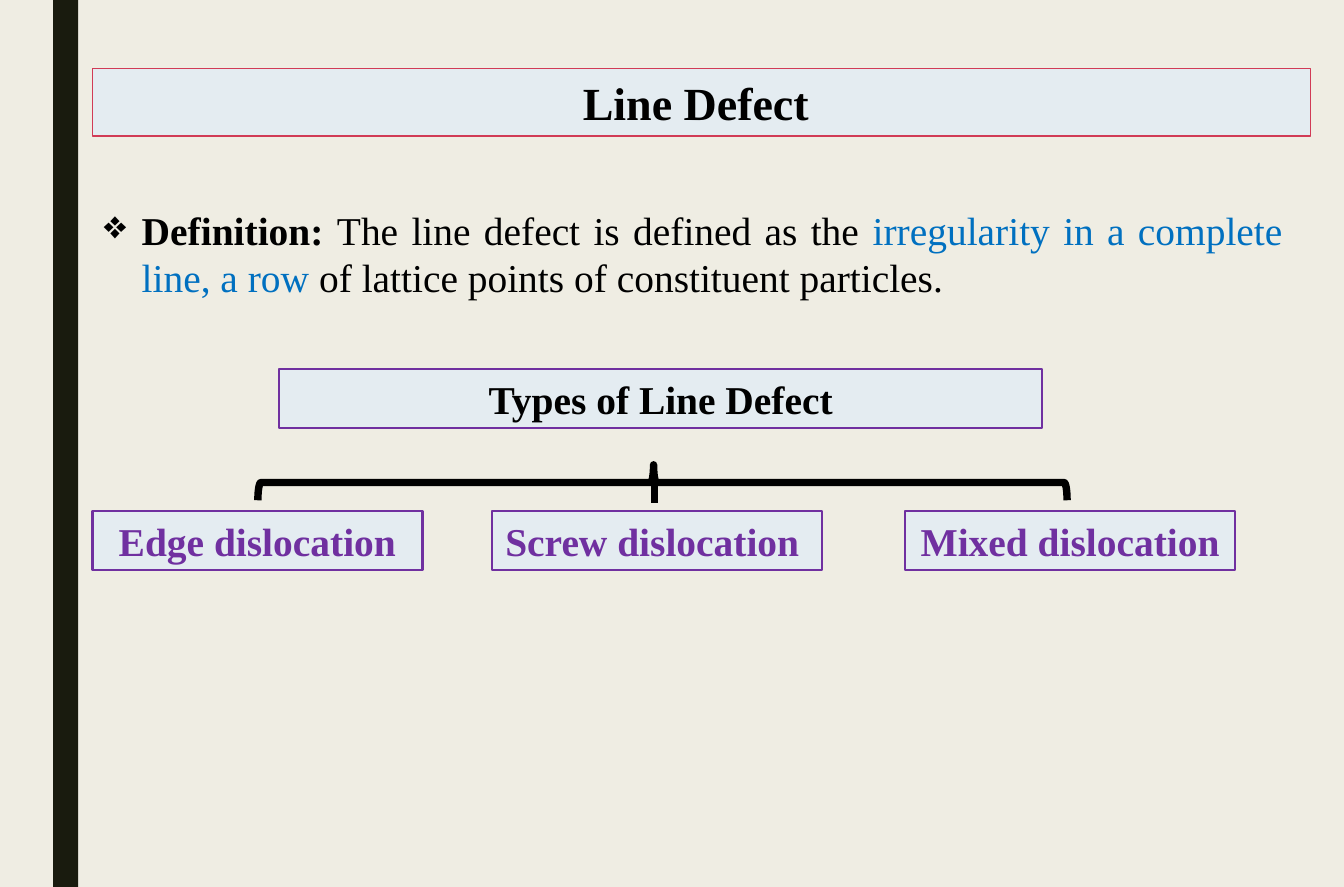
from lxml.etree import SubElement
from pptx import Presentation
from pptx.dml.color import RGBColor
from pptx.enum.shapes import MSO_CONNECTOR, MSO_SHAPE
from pptx.enum.text import MSO_ANCHOR, PP_ALIGN
from pptx.oxml.ns import qn
from pptx.util import Inches, Pt

FONT = "Times New Roman"
CREAM = RGBColor(0xEF, 0xED, 0xE3)
DARK = RGBColor(0x19, 0x1B, 0x0E)
PALE_BLUE = RGBColor(0xE4, 0xEC, 0xF1)
RED = RGBColor(0xD1, 0x3B, 0x56)
PURPLE = RGBColor(0x70, 0x30, 0xA0)
BLUE = RGBColor(0x00, 0x70, 0xC0)
BLACK = RGBColor(0, 0, 0)

BOX_HEIGHT = 0.5
KIND_WIDTH = 2.79
KINDS = [("Edge dislocation", 0), ("Screw dislocation ", 3.38),
         ("Mixed dislocation", 6.87)]


def style_run(run, size, color, bold):
    run.font.name = FONT
    run.font.size = Pt(size)
    run.font.color.rgb = color
    run.font.bold = bold


def add_side_bar(slide, left, top, width, height):
    bar = slide.shapes.add_shape(MSO_SHAPE.RECTANGLE, Inches(left), Inches(top),
                                 Inches(width), Inches(height))
    bar.shadow.inherit = False
    bar.fill.solid()
    bar.fill.fore_color.rgb = DARK
    bar.line.fill.background()


def add_label(slide, left, top, width, height, text, size=24, color=BLACK,
              border=PURPLE, border_width=1.5):
    label = slide.shapes.add_shape(MSO_SHAPE.RECTANGLE, Inches(left), Inches(top),
                                   Inches(width), Inches(height))
    label.shadow.inherit = False
    label.fill.solid()
    label.fill.fore_color.rgb = PALE_BLUE
    label.line.color.rgb = border
    label.line.width = Pt(border_width)
    frame = label.text_frame
    frame.word_wrap = True
    frame.vertical_anchor = MSO_ANCHOR.TOP
    frame.text = text
    paragraph = frame.paragraphs[0]
    paragraph.alignment = PP_ALIGN.CENTER
    style_run(paragraph.runs[0], size, color, True)


def add_definition(slide, left, top, width, height):
    definition = slide.shapes.add_textbox(Inches(left), Inches(top),
                                          Inches(width), Inches(height))
    frame = definition.text_frame
    frame.word_wrap = True
    paragraph = frame.paragraphs[0]
    paragraph.alignment = PP_ALIGN.JUSTIFY
    for text, color, bold in [
        ("Definition: ", BLACK, True),
        ("The line defect is defined as the ", BLACK, False),
        ("irregularity in a complete line, a row", BLUE, False),
        (" of lattice points of constituent particles. ", BLACK, False),
    ]:
        run = paragraph.add_run()
        run.text = text
        style_run(run, 24, color, bold)
    properties = paragraph._p.get_or_add_pPr()
    properties.set("marL", str(Inches(0.32)))
    properties.set("indent", str(Inches(-0.32)))
    SubElement(properties, qn("a:buChar"), char="❖")


def add_brace(slide, left, top, width, height):
    """Draw a brace that points up over the given box, with a middle stem."""
    brace_left = left + (width - height) / 2
    brace_top = top + (height - width) / 2
    brace = slide.shapes.add_shape(MSO_SHAPE.RIGHT_BRACE, Inches(brace_left),
                                   Inches(brace_top), Inches(height), Inches(width))
    brace.rotation = 270
    brace.adjustments[0] = 0.083
    brace.adjustments[1] = 0.489
    brace.shadow.inherit = False
    brace.fill.background()

    stem_x = Inches(left + 0.49 * width)
    stem = slide.shapes.add_connector(MSO_CONNECTOR.STRAIGHT, stem_x, Inches(top + 0.16),
                                      stem_x, Inches(top + 0.32))
    SubElement(stem._element.spPr, qn("a:effectLst"))
    for part in (brace, stem):
        part.line.color.rgb = BLACK
        part.line.width = Pt(4.5)


def add_types_tree(slide, left, top):
    add_label(slide, left + 1.58, top, 6.45, BOX_HEIGHT, "Types of Line Defect")
    add_brace(slide, left + 1.4, top + 0.81, 6.84, 0.3)
    for kind, offset in KINDS:
        add_label(slide, left + offset, top + 1.2, KIND_WIDTH, BOX_HEIGHT, kind,
                  color=PURPLE)


def main():
    presentation = Presentation()
    presentation.slide_width = Inches(11.36)
    presentation.slide_height = Inches(7.5)
    slide = presentation.slides.add_slide(presentation.slide_layouts[6])
    slide.background.fill.solid()
    slide.background.fill.fore_color.rgb = CREAM

    add_side_bar(slide, 0.45, 0, 0.21, 7.5)
    add_label(slide, 0.78, 0.58, 10.3, 0.57, "Line Defect ", size=28,
              border=RED, border_width=0.75)
    add_definition(slide, 0.78, 1.69, 10.16, 0.91)
    add_types_tree(slide, 0.78, 3.12)
    presentation.save("out.pptx")


if __name__ == "__main__":
    main()
